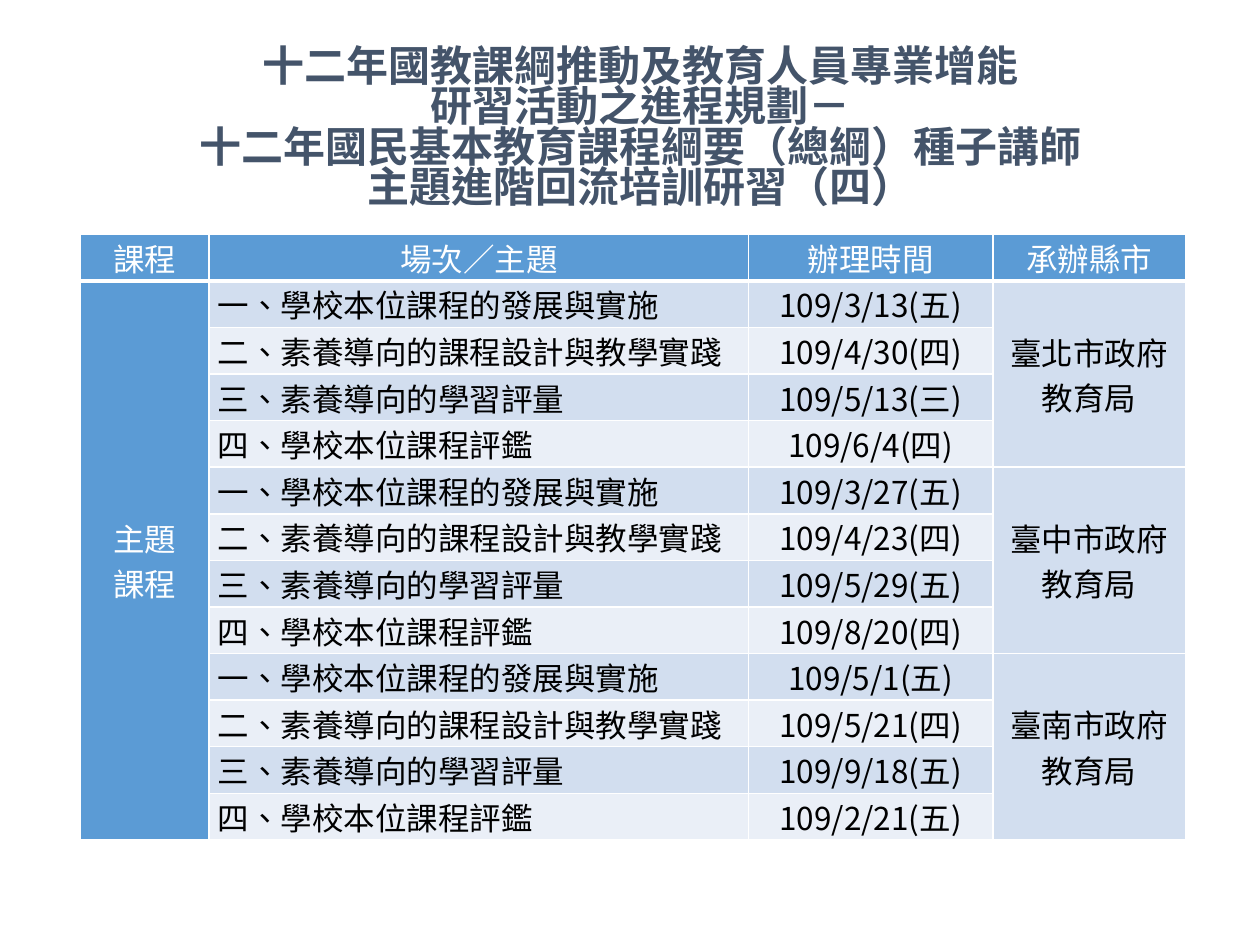
from dataclasses import dataclass

from lxml import etree
from pptx import Presentation
from pptx.dml.color import RGBColor
from pptx.enum.lang import MSO_LANGUAGE_ID
from pptx.enum.text import MSO_ANCHOR, MSO_AUTO_SIZE, PP_ALIGN
from pptx.oxml.ns import qn
from pptx.util import Inches, Pt

CENTER = PP_ALIGN.CENTER
JUSTIFY = PP_ALIGN.JUSTIFY
MIDDLE = MSO_ANCHOR.MIDDLE
NO_FIT = MSO_AUTO_SIZE.NONE
CHINESE = MSO_LANGUAGE_ID.TRADITIONAL_CHINESE


@dataclass(frozen=True)
class Theme:
    font: str = "Noto Sans CJK SC"
    title: str = "44546A"
    head: str = "5B9BD5"
    odd: str = "D2DEEF"
    even: str = "EAEFF7"
    white: str = "FFFFFF"
    black: str = "000000"
    big: int = 24
    body: int = 18
    lead: int = 23
    rule: int = 1
    thick: int = 3


THEME = Theme()

TITLE = [
    "十二年國教課綱推動及教育人員專業增能",
    "研習活動之進程規劃－",
    "十二年國民基本教育課程綱要（總綱）種子講師",
    "主題進階回流培訓研習（四）",
]
HEADS = ["課程", "場次／主題", "辦理時間", "承辦縣市"]
COURSE = "主題\n課程"
TOPICS = [
    "一、學校本位課程的發展與實施",
    "二、素養導向的課程設計與教學實踐",
    "三、素養導向的學習評量",
    "四、學校本位課程評鑑",
]
HOSTS = {
    "臺北市政府教育局": ["109/3/13(五)", "109/4/30(四)", "109/5/13(三)", "109/6/4(四)"],
    "臺中市政府教育局": ["109/3/27(五)", "109/4/23(四)", "109/5/29(五)", "109/8/20(四)"],
    "臺南市政府教育局": ["109/5/1(五)", "109/5/21(四)", "109/9/18(五)", "109/2/21(五)"],
}
WIDTHS = [1.02, 4.28, 1.94, 1.53]
ROW = 0.37


def style_text(frame, size, color, align, bold=False):
    for para in frame.paragraphs:
        para.alignment = align
        for run in para.runs:
            font = run.font
            font.size = Pt(size)
            font.bold = bold
            font.name = THEME.font
            font.color.rgb = RGBColor.from_string(color)
            font.language_id = CHINESE
            east = etree.Element(qn("a:ea"), typeface=THEME.font)
            font._element.find(qn("a:latin")).addnext(east)


def add_title(slide):
    shape = slide.shapes.title
    shape.left, shape.top = Inches(0.71), Inches(0.68)
    shape.width, shape.height = Inches(8.75), Inches(0.71)
    frame = shape.text_frame
    frame.word_wrap = True
    frame.auto_size = NO_FIT
    frame.vertical_anchor = MIDDLE
    para = frame.paragraphs[0]
    para.text = "\v".join(TITLE)
    para.line_spacing = Pt(THEME.lead)
    style_text(frame, THEME.big, THEME.title, CENTER, True)


def set_edges(cell, base):
    props = cell._tc.get_or_add_tcPr()
    for side in "LRTB":
        width = base if side == "B" else THEME.rule
        line = etree.SubElement(props, qn(f"a:ln{side}"), w=str(Pt(width)))
        fill = etree.SubElement(line, qn("a:solidFill"))
        etree.SubElement(fill, qn("a:srgbClr"), val=THEME.white)


def fill_cell(cell, text, fill, color=THEME.black, align=CENTER, pad=0.04):
    cell.text_frame.text = text
    cell.vertical_anchor = MIDDLE
    cell.margin_left = cell.margin_right = Inches(pad)
    cell.margin_top = cell.margin_bottom = 0
    cell.fill.solid()
    cell.fill.fore_color.rgb = RGBColor.from_string(fill)
    style_text(cell.text_frame, THEME.body, color, align)


def add_grid(slide):
    count = 1 + len(HOSTS) * len(TOPICS)
    frame = slide.shapes.add_table(
        count, len(WIDTHS), Inches(0.64), Inches(1.86),
        Inches(sum(WIDTHS)), Inches(ROW * count))
    table = frame.table
    for col, width in zip(table.columns, WIDTHS):
        col.width = Inches(width)
    for index, row in enumerate(table.rows):
        row.height = Inches(ROW)
        for cell in row.cells:
            set_edges(cell, THEME.rule if index else THEME.thick)
    return table


def add_group(table, top, host, dates):
    for step, (topic, date) in enumerate(zip(TOPICS, dates)):
        fill = THEME.even if step % 2 else THEME.odd
        row = top + step
        fill_cell(table.cell(row, 1), topic, fill, align=JUSTIFY, pad=0.07)
        fill_cell(table.cell(row, 2), date, fill, pad=0.07)
    first = table.cell(top, 3)
    first.merge(table.cell(top + len(TOPICS) - 1, 3))
    fill_cell(first, host, THEME.odd)


def add_plan(slide):
    table = add_grid(slide)
    for col, head in enumerate(HEADS):
        fill_cell(table.cell(0, col), head, THEME.head, THEME.white)
    side = table.cell(1, 0)
    side.merge(table.cell(len(table.rows) - 1, 0))
    fill_cell(side, COURSE, THEME.head, THEME.white)
    for index, (host, dates) in enumerate(HOSTS.items()):
        add_group(table, 1 + index * len(TOPICS), host, dates)


def main():
    deck = Presentation()
    deck.slide_width, deck.slide_height = Inches(10), Inches(7.5)
    slide = deck.slides.add_slide(deck.slide_layouts[5])
    add_title(slide)
    add_plan(slide)
    deck.save("out.pptx")


if __name__ == "__main__":
    main()
